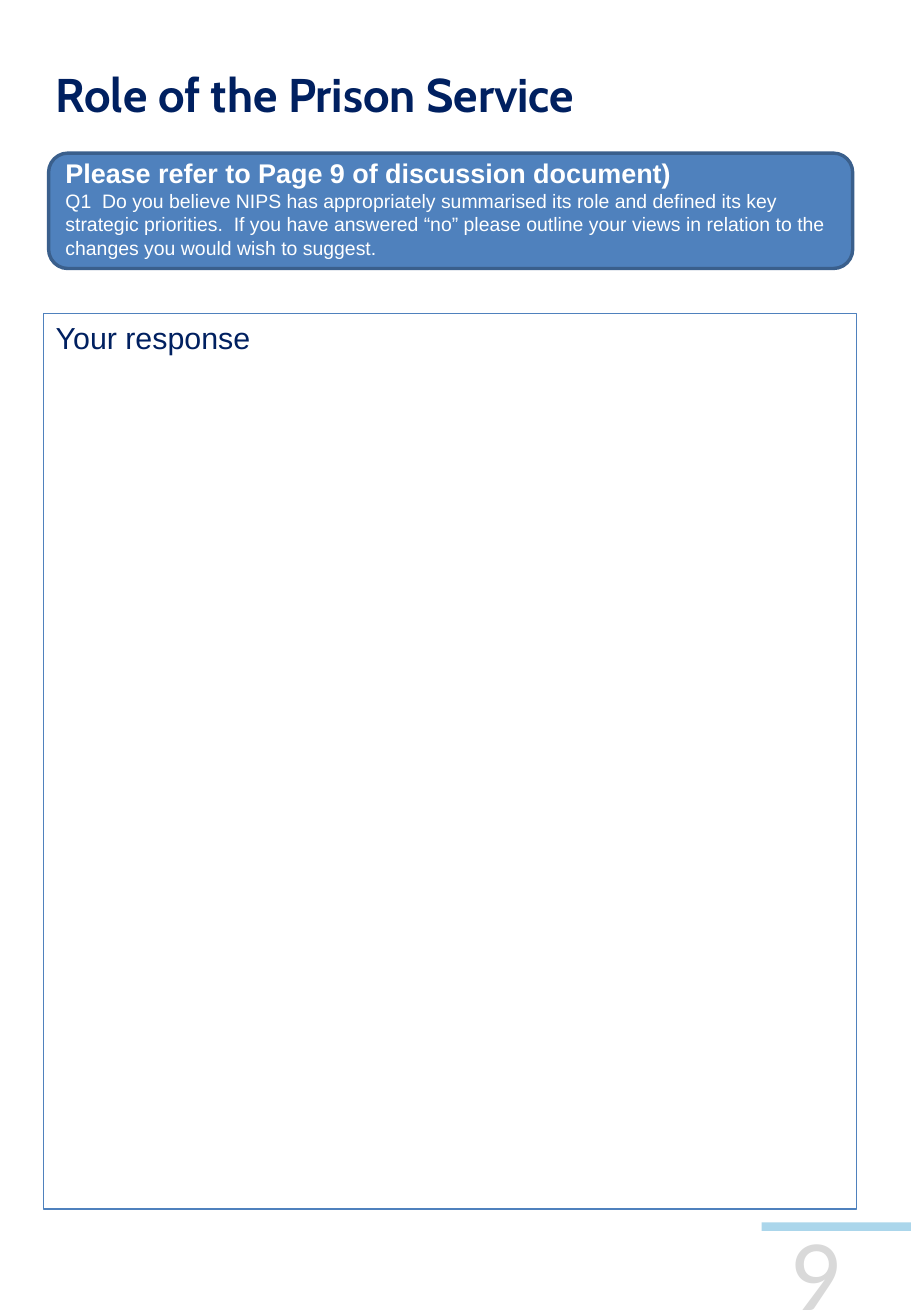
from dataclasses import dataclass
from typing import Optional

import pptx
import pptx.dml.color
import pptx.enum.shapes
import pptx.enum.text
import pptx.util

Inches = pptx.util.Inches
Shape = pptx.enum.shapes.MSO_SHAPE


@dataclass(frozen=True)
class Theme:
    navy: str = "002060"
    blue: str = "4F81BD"
    dark_blue: str = "3A5F8C"
    light_blue: str = "ABD6EB"
    grey: str = "D9D9D9"
    white: str = "FFFFFF"
    heading_font: str = "Cabin"
    body_font: str = "Arial"
    number_font: str = "Calibri"
    title_size: float = 28
    prompt_size: float = 16
    question_size: float = 11.5
    response_size: float = 18
    number_size: float = 60


@dataclass(frozen=True)
class Area:
    left: float
    top: float
    width: float
    height: float

    def lengths(self) -> tuple:
        return tuple(Inches(v) for v in (self.left, self.top, self.width, self.height))


@dataclass(frozen=True)
class Line:
    text: str
    size: float
    font: str
    color: str
    bold: bool = False


@dataclass(frozen=True)
class Panel:
    area: Area
    outline: Shape
    fill: Optional[str] = None
    border: Optional[str] = None
    border_width: float = 0


THEME = Theme()
MARGIN = 0.36

QUESTION_PANEL = Panel(Area(0.4, 1.26, 6.62, 0.95), Shape.ROUNDED_RECTANGLE,
                       THEME.blue, THEME.dark_blue, 2)
FOOTER_BAR = Panel(Area(6.27, 10.06, 1.23, 0.07), Shape.RECTANGLE, THEME.light_blue)
RESPONSE_PANEL = Panel(Area(MARGIN, 2.58, 6.69, 7.37), Shape.RECTANGLE,
                       border=THEME.blue, border_width=0.75)

TITLE = Line("Role of the Prison Service", THEME.title_size,
             THEME.heading_font, THEME.navy, True)
QUESTION = [
    Line("Please refer to Page 9 of discussion document)",
         THEME.prompt_size, THEME.body_font, THEME.white, True),
    Line("Q1  Do you believe NIPS has appropriately summarised its role and defined "
         "its key strategic priorities.  If you have answered “no” please outline "
         "your views in relation to the changes you would wish to suggest.",
         THEME.question_size, THEME.body_font, THEME.white),
]
RESPONSE = Line("Your response", THEME.response_size, THEME.body_font, THEME.navy)
PAGE_NUMBER = Line("9", THEME.number_size, THEME.number_font, THEME.grey)


def rgb(color: str) -> pptx.dml.color.RGBColor:
    return pptx.dml.color.RGBColor.from_string(color)


def write(frame, lines: list[Line]) -> None:
    """Fill a text frame with left-aligned paragraphs from the top."""
    frame.word_wrap = True
    frame.auto_size = pptx.enum.text.MSO_AUTO_SIZE.NONE
    frame.vertical_anchor = pptx.enum.text.MSO_ANCHOR.TOP
    for index, line in enumerate(lines):
        paragraph = frame.add_paragraph() if index else frame.paragraphs[0]
        paragraph.text = line.text
        paragraph.alignment = pptx.enum.text.PP_ALIGN.LEFT
        paragraph.font.name = line.font
        paragraph.font.size = pptx.util.Pt(line.size)
        paragraph.font.bold = line.bold
        paragraph.font.color.rgb = rgb(line.color)


def add_panel(slide, panel: Panel):
    shape = slide.shapes.add_shape(panel.outline, *panel.area.lengths())
    shape.shadow.inherit = False
    if panel.fill:
        shape.fill.solid()
        shape.fill.fore_color.rgb = rgb(panel.fill)
    else:
        shape.fill.background()
    if panel.border:
        shape.line.color.rgb = rgb(panel.border)
        shape.line.width = pptx.util.Pt(panel.border_width)
    else:
        shape.line.fill.background()
    return shape


def add_text(slide, area: Area, lines: list[Line]) -> None:
    write(slide.shapes.add_textbox(*area.lengths()).text_frame, lines)


def place_title(slide, area: Area, line: Line) -> None:
    title = slide.shapes.title
    title.left, title.top, title.width, title.height = area.lengths()
    write(title.text_frame, [line])
    heading = title.text_frame.paragraphs[0]
    heading.line_spacing = 0.9
    heading.space_before = pptx.util.Pt(0)


def main() -> None:
    deck = pptx.Presentation()
    deck.slide_width, deck.slide_height = Inches(7.5), Inches(10.83)
    slide = deck.slides.add_slide(deck.slide_layouts[5])

    place_title(slide, Area(MARGIN, 0.54, 6.74, 0.53), TITLE)
    add_panel(slide, QUESTION_PANEL)
    add_panel(slide, FOOTER_BAR)
    add_text(slide, Area(6.4, 9.9, 1.23, 1.11), [PAGE_NUMBER])
    add_text(slide, Area(0.44, 1.24, 6.62, 0.95), QUESTION)
    response = add_panel(slide, RESPONSE_PANEL)
    write(response.text_frame, [RESPONSE])

    deck.save("out.pptx")


if __name__ == "__main__":
    main()
